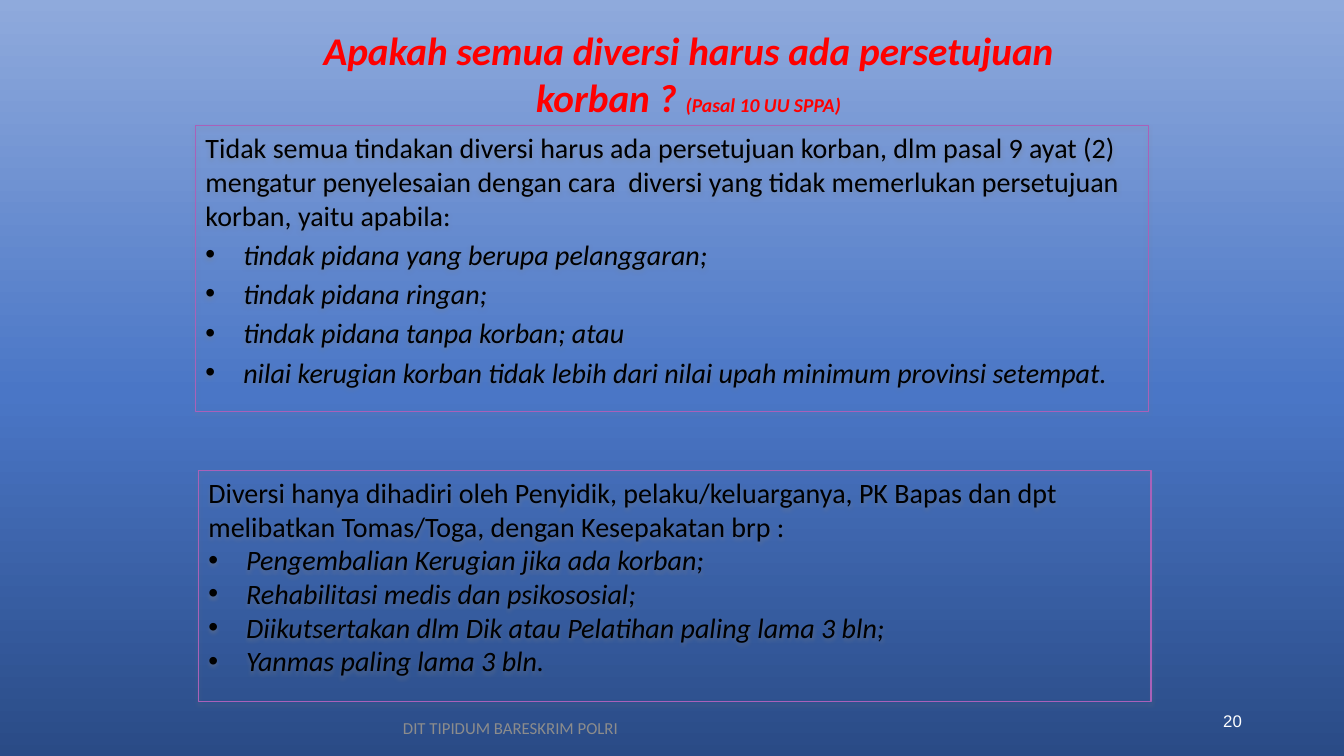
"""Builds a slide on diversion cases that need no consent from the victim."""
from lxml.etree import SubElement
from pptx import Presentation
from pptx.dml.color import RGBColor
from pptx.enum.shapes import MSO_SHAPE
from pptx.enum.text import MSO_ANCHOR, MSO_AUTO_SIZE, PP_ALIGN
from pptx.oxml.ns import qn
from pptx.util import Pt

BLACK = RGBColor(0x00, 0x00, 0x00)
RED = RGBColor(0xFF, 0x00, 0x00)
WHITE = RGBColor(0xFF, 0xFF, 0xFF)
GREY = RGBColor(0x8C, 0x8C, 0x8C)
PURPLE = RGBColor(0xA9, 0x61, 0xB9)
SHADOW = RGBColor(0x80, 0x80, 0x80)
BACKGROUND = [
    (0, RGBColor(0x2A, 0x4B, 0x86)),
    (48, RGBColor(0x4A, 0x76, 0xC6)),
    (100, RGBColor(0x8F, 0xAA, 0xDC)),
]

TITLE = "Apakah semua diversi harus ada persetujuan korban ? "
TITLE_SOURCE = "(Pasal 10 UU SPPA)"
TITLE_PLACE = (215.3, 15.1, 553, 74.9)
PANELS = [
    {
        "place": (139.7, 90, 680.4, 203.8),
        "intro": "Tidak semua tindakan diversi harus ada persetujuan korban, dlm pasal 9 ayat (2) "
                 "mengatur penyelesaian dengan cara  diversi yang tidak memerlukan persetujuan "
                 "korban, yaitu apabila:",
        "items": [
            "tindak pidana yang berupa pelanggaran;",
            "tindak pidana ringan;",
            "tindak pidana tanpa korban; atau",
            "nilai kerugian korban tidak lebih dari nilai upah minimum provinsi setempat.",
        ],
        "gap": 4,
    },
    {
        "place": (141.8, 336.2, 680.4, 164.9),
        "intro": "Diversi hanya dihadiri oleh Penyidik, pelaku/keluarganya, PK Bapas dan dpt "
                 "melibatkan Tomas/Toga, dengan Kesepakatan brp :",
        "items": [
            "Pengembalian Kerugian jika ada korban;",
            "Rehabilitasi medis dan psikososial;",
            "Diikutsertakan dlm Dik atau Pelatihan paling lama 3 bln;",
            "Yanmas paling lama 3 bln.",
        ],
        "gap": 0,
    },
]
FOOTERS = [
    ("DIT TIPIDUM BARESKRIM POLRI", (167.8, 505.4, 393.8, 28.8), PP_ALIGN.CENTER, "Calibri", GREY),
    ("20", (678.2, 500.4, 216, 28.8), PP_ALIGN.RIGHT, "Arial", WHITE),
]
INDENT = 27


def points(place):
    return [Pt(length) for length in place]


def add_text(para, text, size=20, font="Calibri", color=BLACK, bold=False, italic=False,
             align=PP_ALIGN.LEFT, bullet=False, gap=0):
    para.alignment = align
    para.space_before = Pt(gap)
    span = para.add_run()
    span.text = text
    span.font.size = Pt(size)
    span.font.name = font
    span.font.color.rgb = color
    span.font.bold = bold
    span.font.italic = italic
    if bullet:
        properties = para._p.get_or_add_pPr()
        properties.set("marL", str(Pt(INDENT)))
        properties.set("indent", str(-Pt(INDENT)))
        SubElement(properties, qn("a:buFont"), typeface="Arial")
        SubElement(properties, qn("a:buChar"), char="•")


def add_color(parent, color):
    return SubElement(parent, qn("a:srgbClr"), val=str(color))


def paint_background(page):
    fill = page.background.fill
    fill.gradient()
    fill.gradient_angle = 90
    stops = next(page._element.iter(qn("a:gsLst")))
    for stop in list(stops):
        stops.remove(stop)
    for percent, color in BACKGROUND:
        add_color(SubElement(stops, qn("a:gs"), pos=str(percent * 1000)), color)


def add_shadow(box):
    box.shadow.inherit = False
    effects = box._element.spPr.find(qn("a:effectLst"))
    shadow = SubElement(effects, qn("a:outerShdw"), blurRad=str(Pt(3.1)), dist=str(Pt(1.6)),
                        dir="5400000", rotWithShape="0")
    SubElement(add_color(shadow, SHADOW), qn("a:alpha"), val="38000")


def add_title(page):
    box = page.shapes.title
    box.left, box.top, box.width, box.height = points(TITLE_PLACE)
    frame = box.text_frame
    frame.word_wrap = True
    frame.auto_size = MSO_AUTO_SIZE.SHAPE_TO_FIT_TEXT
    frame.vertical_anchor = MSO_ANCHOR.TOP
    for text, size in ((TITLE, 28), (TITLE_SOURCE, 14)):
        add_text(frame.paragraphs[0], text, size=size, color=RED, bold=True, italic=True,
                 align=PP_ALIGN.CENTER)


def add_panel(page, panel):
    box = page.shapes.add_shape(MSO_SHAPE.RECTANGLE, *points(panel["place"]))
    box.fill.background()
    box.line.color.rgb = PURPLE
    box.line.width = Pt(0.75)
    add_shadow(box)
    frame = box.text_frame
    frame.word_wrap = True
    frame.vertical_anchor = MSO_ANCHOR.TOP
    add_text(frame.paragraphs[0], panel["intro"])
    for item in panel["items"]:
        add_text(frame.add_paragraph(), item, italic=True, bullet=True, gap=panel["gap"])


def add_footer(page, text, place, align, font, color):
    frame = page.shapes.add_textbox(*points(place)).text_frame
    frame.word_wrap = True
    frame.vertical_anchor = MSO_ANCHOR.MIDDLE
    add_text(frame.paragraphs[0], text, size=12, font=font, color=color, align=align)


def main():
    deck = Presentation()
    deck.slide_width, deck.slide_height = Pt(960), Pt(540)
    page = deck.slides.add_slide(deck.slide_layouts.get_by_name("Title Only"))
    paint_background(page)
    add_title(page)
    for panel in PANELS:
        add_panel(page, panel)
    for footer in FOOTERS:
        add_footer(page, *footer)
    deck.save("out.pptx")


if __name__ == "__main__":
    main()
